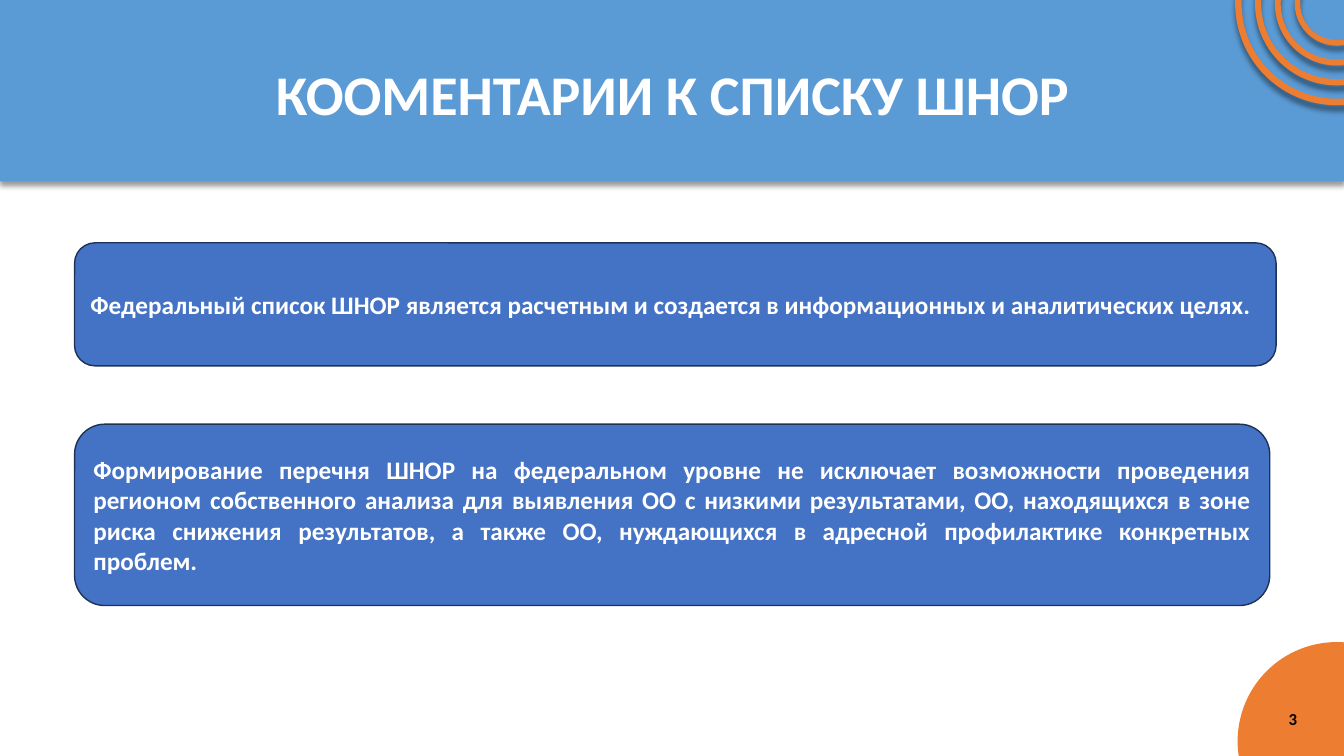
from lxml.etree import SubElement
from pptx import Presentation
from pptx.dml.color import RGBColor
from pptx.enum.shapes import MSO_SHAPE
from pptx.enum.text import MSO_ANCHOR, MSO_AUTO_SIZE, PP_ALIGN
from pptx.oxml.ns import qn
from pptx.util import Cm, Pt

WHITE = RGBColor(0xFF, 0xFF, 0xFF)
BLACK = RGBColor(0, 0, 0)
SKY = RGBColor(0x5B, 0x9B, 0xD5)
ORANGE = RGBColor(0xED, 0x7D, 0x31)
BLUE = RGBColor(0x44, 0x72, 0xC4)
NAVY = RGBColor(0x1E, 0x32, 0x56)

WIDTH, HEIGHT = 33.87, 19.05
CORNER_X = 33.69
RING_Y, DISC_Y = 0.09, 18.68
RING_DIAMETERS = (5, 4, 3, 2)

COMMENTS = (
    ((1.88, 6.12, 30.28, 3.1),
     "Федеральный список ШНОР является расчетным и создается в информационных "
     "и аналитических целях."),
    ((1.88, 10.69, 30.12, 4.57),
     "Формирование перечня ШНОР на федеральном уровне не исключает возможности "
     "проведения регионом собственного анализа для выявления ОО с низкими "
     "результатами, ОО, находящихся в зоне риска снижения результатов, а также "
     "ОО, нуждающихся в адресной профилактике конкретных проблем."),
)


class CommentSlide:
    """Holds the text style and the current slide, and adds its elements."""

    font_name = "Calibri"

    def __init__(self, page):
        """Keep the slide that receives the elements."""
        self.page = page

    def place(self, box, area):
        """Move a box to its left, top, width and height in centimetres."""
        for side, length in zip(("left", "top", "width", "height"), area):
            setattr(box, side, Cm(length))

    def fill_text(self, box, text, size, color, align, **spacing):
        """Fill a box with one bold, vertically centred paragraph."""
        frame = box.text_frame
        frame.text = text
        para = frame.paragraphs[0]
        formats = (
            (frame, {"word_wrap": True, "auto_size": MSO_AUTO_SIZE.NONE,
                     "vertical_anchor": MSO_ANCHOR.MIDDLE}),
            (para, {"alignment": align, **spacing}),
            (para.font, {"name": self.font_name, "size": Pt(size), "bold": True}),
        )
        for target, values in formats:
            for name, value in values.items():
                setattr(target, name, value)
        para.font.color.rgb = color

    def shape(self, kind, area, fill, line=None, line_width=1):
        """Add a filled preset shape without a shadow."""
        box = self.page.shapes.add_shape(kind, *map(Cm, area))
        box.shadow.inherit = False
        box.fill.solid()
        box.fill.fore_color.rgb = fill
        if line is None:
            box.line.fill.background()
        else:
            box.line.color.rgb = line
            box.line.width = Pt(line_width)
        return box

    def circle(self, kind, center_y, diameter, **outline):
        """Add a circle centred on the right-hand decoration axis."""
        radius = diameter / 2
        area = (CORNER_X - radius, center_y - radius, diameter, diameter)
        return self.shape(kind, area, ORANGE, **outline)

    def drop_shadow(self, box, blur, distance, opacity):
        """Give a shape a soft black shadow that falls downwards."""
        effects = box._element.spPr.find(qn("a:effectLst"))
        shadow = SubElement(effects, qn("a:outerShdw"), blurRad=str(Pt(blur)),
                            dist=str(Pt(distance)), dir="5400000",
                            algn="t", rotWithShape="0")
        color = SubElement(shadow, qn("a:srgbClr"), val=str(BLACK))
        SubElement(color, qn("a:alpha"), val=str(opacity * 1000))

    def header(self):
        """Add the band across the top."""
        band = self.shape(MSO_SHAPE.RECTANGLE, (0, 0, WIDTH, 4.57), SKY)
        self.drop_shadow(band, 4, 3, 40)

    def rings(self):
        """Add the concentric rings in the top corner."""
        for diameter in RING_DIAMETERS:
            ring = self.circle(MSO_SHAPE.DONUT, RING_Y, diameter,
                               line=ORANGE, line_width=3.5)
            ring.adjustments[0] = 0.008
            self.drop_shadow(ring, 4, 4, 43)

    def title(self, text):
        """Format the title placeholder and bring it in front of the band."""
        box = self.page.shapes.title
        box._element.getparent().append(box._element)
        self.place(box, (2.34, 0.46, 29.21, 3.68))
        self.fill_text(box, text, 40, WHITE, PP_ALIGN.CENTER,
                       line_spacing=1.07, space_after=Pt(8))

    def number(self, text):
        """Add the page number over the bottom disc."""
        box = self.page.shapes.add_textbox(*map(Cm, (25.32, 17.6, 7.62, 1.02)))
        self.fill_text(box, text, 12, BLACK, PP_ALIGN.RIGHT)

    def comment(self, area, text):
        """Add a rounded panel with a justified comment."""
        panel = self.shape(MSO_SHAPE.ROUNDED_RECTANGLE, area, BLUE, line=NAVY)
        self.fill_text(panel, text, 18, WHITE, PP_ALIGN.JUSTIFY)


def main():
    """Build the deck and save it."""
    deck = Presentation()
    deck.slide_width, deck.slide_height = Cm(WIDTH), Cm(HEIGHT)
    slide = CommentSlide(deck.slides.add_slide(deck.slide_layouts[5]))
    slide.header()
    slide.circle(MSO_SHAPE.OVAL, DISC_Y, 5)
    slide.rings()
    slide.title("КООМЕНТАРИИ К СПИСКУ ШНОР")
    slide.number("3")
    for area, text in COMMENTS:
        slide.comment(area, text)
    deck.save("out.pptx")


if __name__ == "__main__":
    main()
